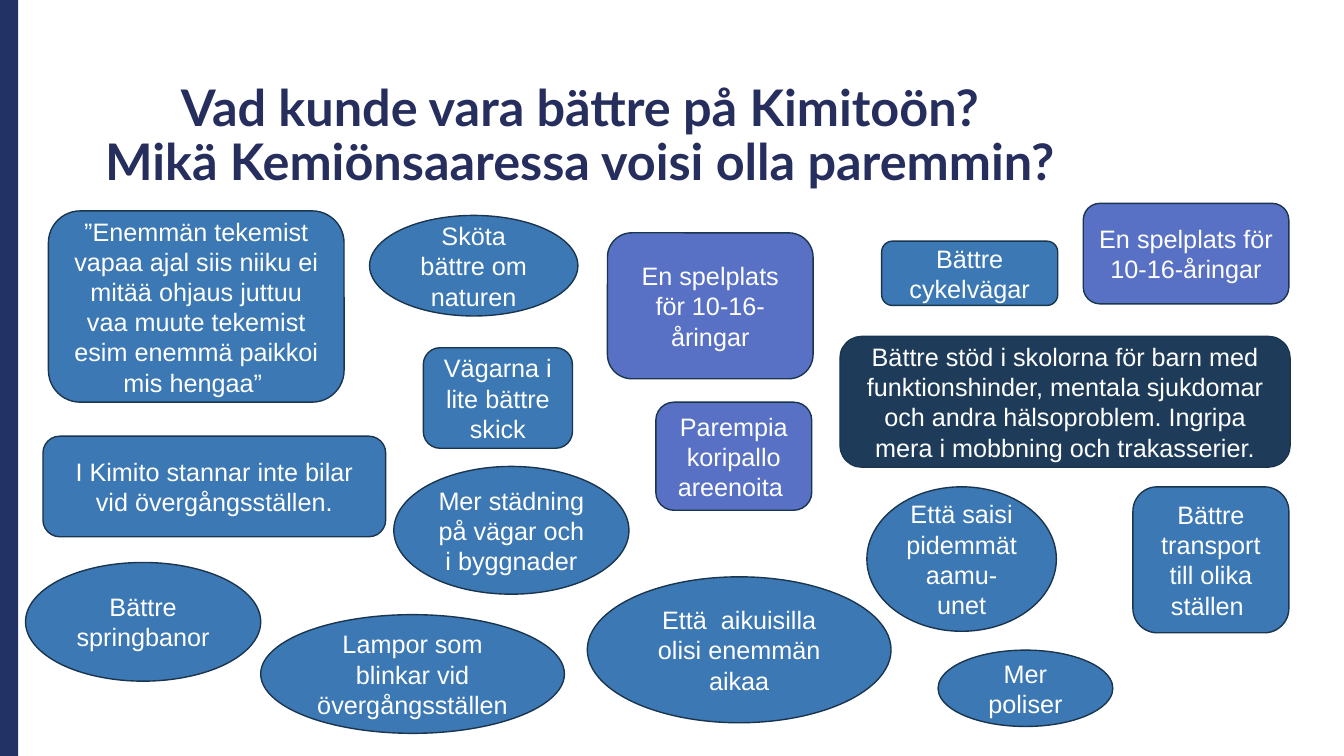
import pptx
import pptx.util
import pptx.dml.color
import pptx.enum.shapes
import pptx.enum.text

RGB = pptx.dml.color.RGBColor
Pt = pptx.util.Pt
SHAPE = pptx.enum.shapes.MSO_SHAPE
ALIGN = pptx.enum.text.PP_ALIGN
ANCHOR = pptx.enum.text.MSO_ANCHOR

NAVY = RGB(0x23, 0x32, 0x64)
TITLE = RGB(0x26, 0x2E, 0x5E)
BLUE = RGB(0x3C, 0x78, 0xB3)
VIOLET = RGB(0x58, 0x71, 0xC5)
DARK = RGB(0x1E, 0x3C, 0x5A)
OUTLINE = RGB(0x1A, 0x35, 0x4E)
WHITE = RGB(0xFF, 0xFF, 0xFF)

BOX, OVAL = SHAPE.ROUNDED_RECTANGLE, SHAPE.OVAL

TITLE_LINES = ["Vad kunde vara bättre på Kimitoön?",
               "Mikä Kemiönsaaressa voisi olla paremmin?"]
TITLE_AREA = (0, 8.5, 86.3, 19.3)
SIDE_BAR = (0, 0, 1.35, 100)

WISHES = [
    (BOX, BLUE, (31.5, 46, 11.1, 13.3), "Vägarna i lite bättre skick"),
    (BOX, BLUE, (3.6, 27.9, 22, 25.3),
     "”Enemmän tekemist vapaa ajal siis niiku ei mitää ohjaus juttuu "
     "vaa muute tekemist esim enemmä paikkoi mis hengaa” "),
    (BOX, DARK, (62.5, 44.5, 33.5, 17.3),
     "Bättre stöd i skolorna för barn med funktionshinder, mentala sjukdomar "
     "och andra hälsoproblem. Ingripa mera i mobbning och trakasserier."),
    (BOX, BLUE, (65.6, 31.9, 13.1, 8.5), "Bättre cykelvägar"),
    (BOX, BLUE, (84.3, 64.4, 11.6, 19.3), "Bättre transport till olika ställen "),
    (BOX, VIOLET, (48.8, 53.2, 11.6, 14.3), "Parempia koripallo areenoita "),
    (BOX, VIOLET, (45.2, 30.8, 15.3, 19.3), "En spelplats för 10-16-åringar"),
    (BOX, VIOLET, (80.6, 26.9, 15.3, 13.3), "En spelplats för 10-16-åringar"),
    (OVAL, BLUE, (27.5, 28.5, 15.5, 13.3), "Sköta bättre om naturen"),
    (OVAL, BLUE, (29.3, 61.7, 17.5, 16.9), "Mer städning på vägar och i byggnader"),
    (OVAL, BLUE, (64.5, 64.4, 14.1, 19.1), "Että saisi pidemmät aamu-unet"),
    (OVAL, BLUE, (43.7, 76.3, 22.6, 19.3), "Että  aikuisilla olisi enemmän aikaa"),
    (OVAL, BLUE, (1.9, 74.4, 17.5, 15.7), "Bättre springbanor"),
    (OVAL, BLUE, (19.4, 81.3, 22.6, 15.7), "Lampor som blinkar vid övergångsställen"),
    (OVAL, BLUE, (69.8, 86, 13, 10.1), "Mer poliser"),
    (BOX, BLUE, (3.2, 57.7, 25.5, 13.3),
     "I Kimito stannar inte bilar vid övergångsställen."),
]

prs = pptx.Presentation()
prs.slide_width = pptx.util.Inches(13.33)
prs.slide_height = pptx.util.Inches(7.5)
s = prs.slides.add_slide(prs.slide_layouts[6])


def place(percents):
    sides = (prs.slide_width, prs.slide_height) * 2
    return [round(side * share / 100) for side, share in zip(sides, percents)]


def add_filled(kind, fill, area):
    sp = s.shapes.add_shape(kind, *place(area))
    sp.shadow.inherit = False
    sp.fill.solid()
    sp.fill.fore_color.rgb = fill
    return sp


def write(sp, lines, font, size, color, bold=False):
    tf = sp.text_frame
    tf.word_wrap = True
    tf.vertical_anchor = ANCHOR.MIDDLE
    p = tf.paragraphs[0]
    p.alignment = ALIGN.CENTER
    for i, line in enumerate(lines):
        if i:
            p.add_line_break()
        r = p.add_run()
        r.text = line
        r.font.name = font
        r.font.size = Pt(size)
        r.font.bold = bold
        r.font.color.rgb = color
    return p


bar = add_filled(SHAPE.RECTANGLE, NAVY, SIDE_BAR)
bar.line.fill.background()

for kind, fill, area, text in WISHES:
    sp = add_filled(kind, fill, area)
    sp.line.color.rgb = OUTLINE
    sp.line.width = Pt(1)
    write(sp, [text], "Arial", 18, WHITE)

title = s.shapes.add_textbox(*place(TITLE_AREA))
p = write(title, TITLE_LINES, "Lato", 36, TITLE, bold=True)
p.line_spacing = 0.9

prs.save("out.pptx")
